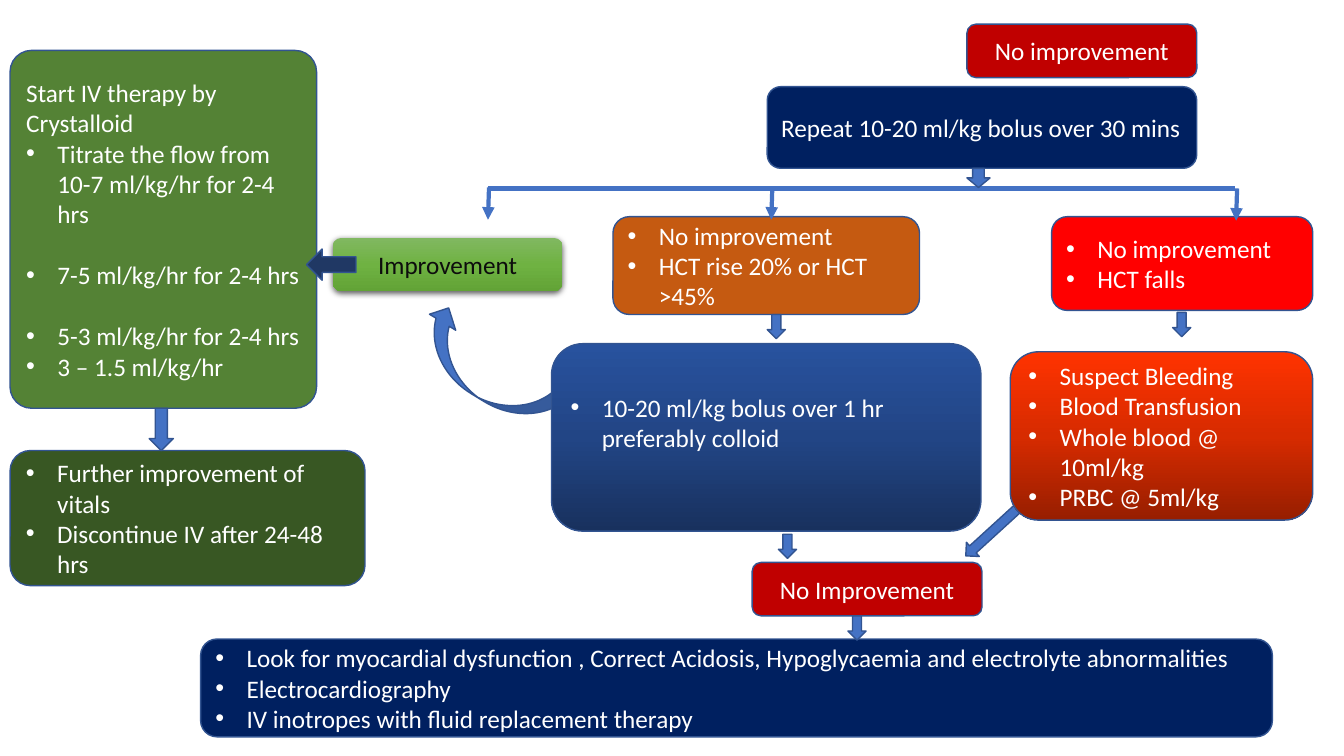
from copy import deepcopy
from lxml import etree
from pptx import Presentation
from pptx.dml.color import RGBColor
from pptx.enum.shapes import MSO_CONNECTOR, MSO_SHAPE as SHAPE
from pptx.enum.text import PP_ALIGN
from pptx.oxml import parse_xml
from pptx.oxml.ns import nsdecls, qn
from pptx.util import Inches, Pt

COLORS = {
    "white": "FFFFFF", "ink": "0D0D0D", "outline": "325491",
    "arrow": "4472C4", "dark_arrow": "203864", "alert": "C00000",
    "navy": "002060", "orange": "C55A11", "red": "FF0000",
    "green": "548235", "dark_green": "385723",
}
GRADIENTS = {
    "improved": ["81B861", "6FB242", "62A336"],
    "bleeding": ["FF3300", "D72B00", "971E00"],
    "colloid": ["28529E", "224585", "18315E"],
}

prs = Presentation()
prs.slide_width, prs.slide_height = Inches(13.33), Inches(7.5)
slide = prs.slides.add_slide(prs.slide_layouts[6])


def color(name):
    return RGBColor.from_string(COLORS[name])


def add_block(kind, frame, fill, rotation=0):
    block = slide.shapes.add_shape(kind, *map(Inches, frame))
    block.shadow.inherit = False
    block.rotation = rotation
    block.line.color.rgb = color("outline")
    block.line.width = Pt(1)
    if fill in GRADIENTS:
        block.fill.gradient()
        block.fill.gradient_angle = 270
        stop_list = block.fill._fill._gradFill.find(qn("a:gsLst"))
        stop_list.append(deepcopy(stop_list[-1]))
        for i, stop in enumerate(block.fill.gradient_stops):
            stop.color.rgb = RGBColor.from_string(GRADIENTS[fill][i])
            stop.position = i / 2
    else:
        block.fill.solid()
        block.fill.fore_color.rgb = color(fill)
    return block


add_block(SHAPE.DOWN_ARROW, (9.79, 4.82, 0.19, 0.83), "arrow", 47.6)
add_block(SHAPE.CURVED_DOWN_ARROW, (4.04, 3.36, 1.65, 0.61), "arrow", 211.4)

# "•" starts a bulleted line, "+" adds one empty line's height above it
STEPS = [
    ((9.59, 0.24, 2.28, 0.53), "alert", "center", ["No improvement"]),
    ((7.61, 0.86, 4.26, 0.81), "navy", "left",
     ["Repeat 10-20 ml/kg bolus over 30 mins"]),
    ((3.3, 2.36, 2.28, 0.53), "improved", "center", ["Improvement"]),
    ((6.08, 2.15, 3.04, 0.97), "orange", "left",
     ["•No improvement", "•HCT rise 20% or HCT >45%"]),
    ((10.43, 2.15, 2.59, 0.93), "red", "left",
     ["•No improvement", "•HCT falls"]),
    ((10.02, 3.49, 3, 1.67), "bleeding", "left",
     ["•Suspect Bleeding", "•Blood Transfusion",
      "•Whole blood @ 10ml/kg", "•PRBC @ 5ml/kg"]),
    ((7.46, 5.58, 2.28, 0.53), "alert", "center", ["No Improvement"]),
    ((1.99, 6.34, 10.63, 0.97), "navy", "left",
     ["•Look for myocardial dysfunction , Correct Acidosis, "
      "Hypoglycaemia and electrolyte abnormalities",
      "•Electrocardiography", "•IV inotropes with fluid replacement therapy"]),
    ((5.47, 3.41, 4.26, 1.86), "colloid", "left",
     ["•10-20 ml/kg bolus over 1 hr preferably colloid"]),
    ((0.1, 0.5, 3.04, 3.55), "green", "left",
     ["Start IV therapy by Crystalloid",
      "•Titrate the flow from 10-7 ml/kg/hr for 2-4 hrs",
      "+•7-5 ml/kg/hr for 2-4 hrs", "+•5-3 ml/kg/hr for 2-4 hrs",
      "•3 – 1.5 ml/kg/hr"]),
    ((0.1, 4.47, 3.52, 1.34), "dark_green", "left",
     ["•Further improvement of vitals", "•Discontinue IV after 24-48 hrs"]),
]
CORNERS = {"green": 0.07, "dark_green": 0.15}

for frame, fill, align, lines in STEPS:
    step = add_block(SHAPE.ROUNDED_RECTANGLE, frame, fill)
    if fill in CORNERS:
        step.adjustments[0] = CORNERS[fill]
    if fill == "colloid":
        step.text_frame.margin_bottom = Inches(0.35)
    if fill == "improved":
        step.line.fill.background()
        step._element.spPr.find(qn("a:effectLst")).append(parse_xml(
            f'<a:outerShdw {nsdecls("a")} blurRad="57150" dist="19050" dir="5400000">'
            '<a:srgbClr val="000000"><a:alpha val="63000"/></a:srgbClr></a:outerShdw>'))
    step.text_frame.word_wrap = True
    for i, line in enumerate(lines):
        paragraph = step.text_frame.paragraphs[0] if i == 0 else step.text_frame.add_paragraph()
        paragraph.text = line.lstrip("+•")
        paragraph.alignment = PP_ALIGN.CENTER if align == "center" else PP_ALIGN.LEFT
        if line.startswith("+"):
            paragraph.space_before = Pt(22)
        if "•" in line:
            properties = paragraph._p.get_or_add_pPr()
            properties.set("marL", str(Inches(0.31)))
            properties.set("indent", str(-Inches(0.31)))
            etree.SubElement(properties, qn("a:buFont"), typeface="Arial")
            etree.SubElement(properties, qn("a:buChar"), char="•")
        paragraph.font.name = "Calibri"
        paragraph.font.size = Pt(18)
        paragraph.font.color.rgb = color("ink" if fill == "improved" else "white")

BRANCHES = [
    (4.84, 1.87, 12.25, 1.87, False),
    (4.85, 1.86, 4.84, 2.18, True),
    (7.66, 1.86, 7.65, 2.18, True),
    (12.27, 1.87, 12.26, 2.19, True),
]
for *ends, has_head in BRANCHES:
    branch = slide.shapes.add_connector(MSO_CONNECTOR.STRAIGHT, *map(Inches, ends))
    branch.line.color.rgb = color("arrow")
    branch.line.width = Pt(3)
    if has_head:
        etree.SubElement(branch.line._get_or_add_ln(), qn("a:tailEnd"), type="triangle")
    etree.SubElement(branch._element.spPr, qn("a:effectLst"))

for left, top in [(7.61, 3.12), (11.63, 3.1), (7.72, 5.3), (8.41, 6.11)]:
    add_block(SHAPE.DOWN_ARROW, (left, top, 0.18, 0.24), "arrow")
add_block(SHAPE.LEFT_ARROW, (3.04, 2.47, 0.49, 0.31), "dark_arrow")
add_block(SHAPE.DOWN_ARROW, (1.48, 4.05, 0.24, 0.42), "arrow")
add_block(SHAPE.DOWN_ARROW, (9.59, 1.67, 0.23, 0.19), "arrow")

prs.save("out.pptx")
